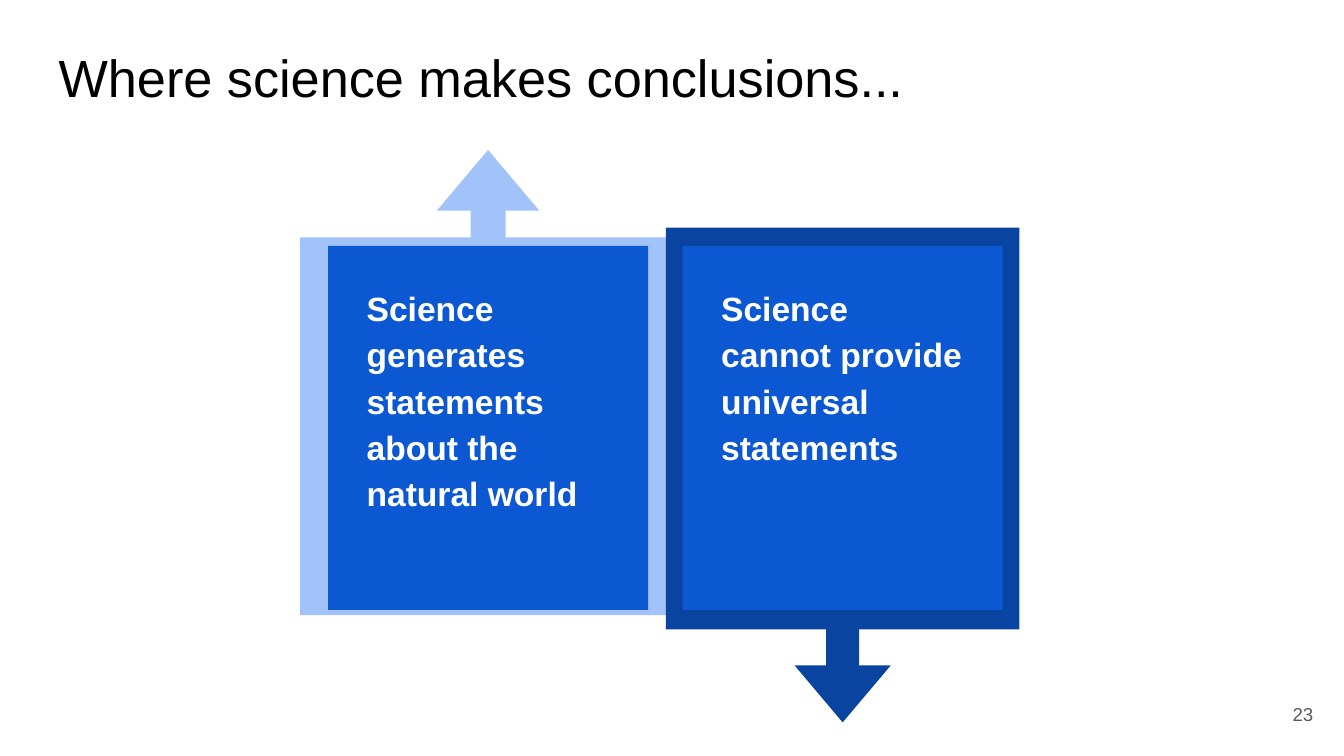
from dataclasses import dataclass

import pptx
import pptx.dml.color
import pptx.enum.shapes
import pptx.enum.text
import pptx.util

Cm = pptx.util.Cm
SHAPE = pptx.enum.shapes.MSO_SHAPE
ALIGN = pptx.enum.text.PP_ALIGN
ANCHOR = pptx.enum.text.MSO_ANCHOR


@dataclass(frozen=True)
class Theme:
    font: str = "Arial"
    title: str = "000000"
    number: str = "595959"
    card: str = "0C58D3"
    card_text: str = "FFFFFF"
    light: str = "A1C3FA"
    dark: str = "0944A1"
    title_size: int = 28
    card_size: int = 18
    number_size: int = 10


THEME = Theme()

# Card grid, in centimetres
CARD_LEFT, CARD_TOP, CARD_W, CARD_H = 6.2, 4.65, 6.05, 6.88
CARD_STEP = 6.7


def add_text(s, text, left, top, width, height, size, color, bold=False,
             align=ALIGN.LEFT, anchor=ANCHOR.TOP, spacing=None):
    tf = s.shapes.add_textbox(Cm(left), Cm(top), Cm(width), Cm(height)).text_frame
    tf.word_wrap = True
    tf.vertical_anchor = anchor
    tf.margin_left = tf.margin_right = tf.margin_top = tf.margin_bottom = Cm(0.25)
    p = tf.paragraphs[0]
    p.text = text
    p.alignment = align
    if spacing:
        p.line_spacing = spacing
    p.font.name = THEME.font
    p.font.size = pptx.util.Pt(size)
    p.font.bold = bold
    p.font.color.rgb = pptx.dml.color.RGBColor.from_string(color)


def add_block(s, kind, left, top, width, height, color, adjustments):
    sp = s.shapes.add_shape(kind, Cm(left), Cm(top), Cm(width), Cm(height))
    sp.shadow.inherit = False
    sp.fill.solid()
    sp.fill.fore_color.rgb = pptx.dml.color.RGBColor.from_string(color)
    sp.line.fill.background()
    for i, value in enumerate(adjustments):
        sp.adjustments[i] = value
    return sp


def add_card(s, column, text, color, center_y, length, breadth, rotation):
    """A card on an arrow callout that points up (270) or down (90)."""
    left = CARD_LEFT + column * CARD_STEP
    center_x = left + CARD_W / 2
    callout = add_block(s, SHAPE.RIGHT_ARROW_CALLOUT, center_x - length / 2,
                        center_y - breadth / 2, length, breadth, color,
                        (0.093, 0.136, 0.161, 0.812))
    callout.rotation = rotation
    add_block(s, SHAPE.SNIP_1_RECTANGLE, left, CARD_TOP, CARD_W, CARD_H,
              THEME.card, (0,))
    add_text(s, text, left + 0.48, CARD_TOP + 0.43, 5.1, 5.74,
             THEME.card_size, THEME.card_text, bold=True, spacing=1.15)


def main():
    prs = pptx.Presentation()
    prs.slide_width, prs.slide_height = Cm(25.4), Cm(14.29)
    s = prs.slides.add_slide(prs.slide_layouts[6])

    # Title
    add_text(s, "Where science makes conclusions...", 0.86, 0.61, 23.67, 1.6,
             THEME.title_size, THEME.title)

    # What science does and does not conclude
    add_card(s, 0, "Science generates statements about the natural world",
             THEME.light, center_y=7.23, length=8.79, breadth=7.11, rotation=270)
    add_card(s, 1, "Science cannot provide universal statements",
             THEME.dark, center_y=8.98, length=9.35, breadth=6.68, rotation=90)

    # Slide number
    add_text(s, "23", 23.55, 12.95, 1.52, 1.09, THEME.number_size, THEME.number,
             align=ALIGN.RIGHT, anchor=ANCHOR.MIDDLE)

    prs.save("out.pptx")


if __name__ == "__main__":
    main()
